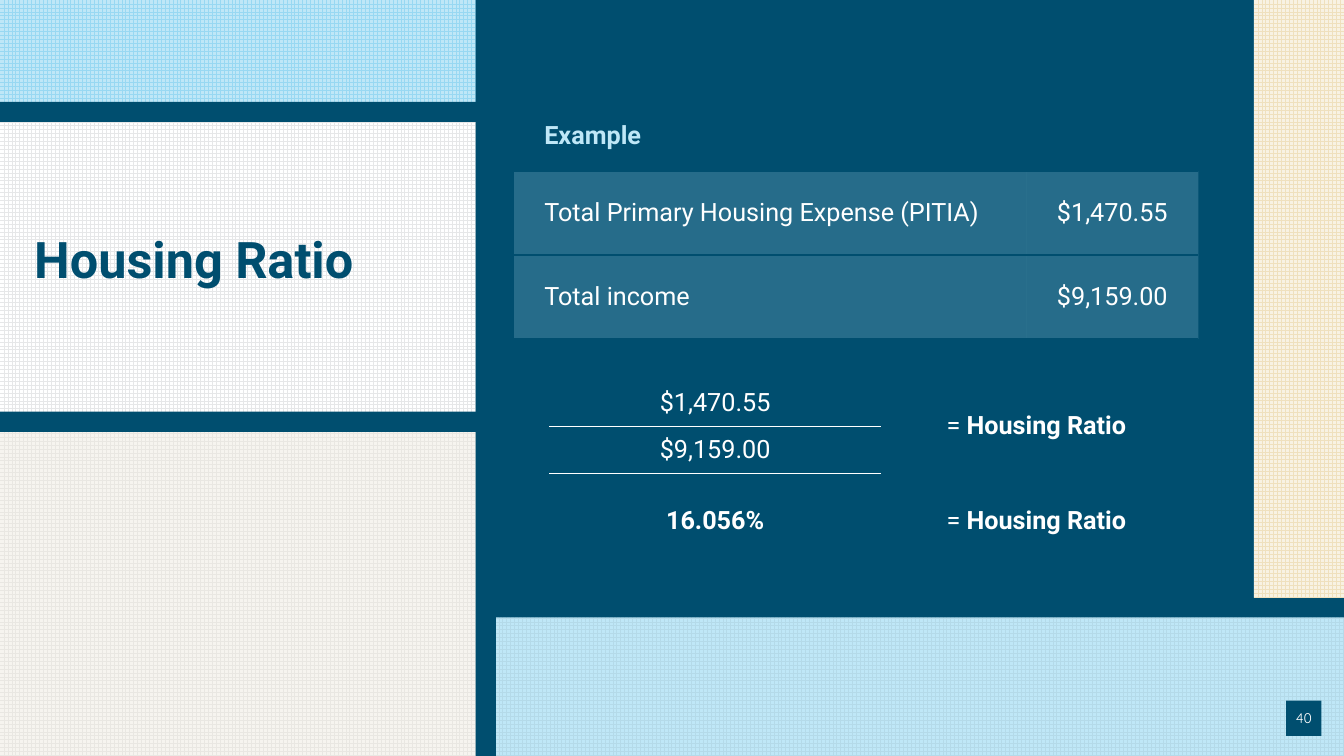
from lxml.etree import SubElement
from pptx import Presentation
from pptx.dml.color import RGBColor
from pptx.enum.dml import MSO_PATTERN as PATTERN
from pptx.enum.shapes import MSO_SHAPE as SHAPE
from pptx.enum.text import MSO_ANCHOR as ANCHOR, PP_ALIGN as ALIGN
from pptx.oxml.ns import qn
from pptx.util import Pt

NAVY, SKY, WHITE = "004E6F", "BFE7F7", "FFFFFF"


def paint(fill, color, grid=None):
    """Solid fill, or a large grid drawn over the colour."""
    if grid:
        fill.patterned()
        fill.pattern = PATTERN.LARGE_GRID
        fill.fore_color.rgb = RGBColor.from_string(grid)
        fill.back_color.rgb = RGBColor.from_string(color)
    else:
        fill.solid()
        fill.fore_color.rgb = RGBColor.from_string(color)


def write(tf, text, size=18, color=WHITE, bold=False, font="Roboto", align=ALIGN.LEFT):
    """Add a run to the first paragraph of a text frame."""
    p = tf.paragraphs[0]
    p.alignment = align
    r = p.add_run()
    r.text = text
    r.font.size, r.font.bold, r.font.name = Pt(size), bold, font
    r.font.color.rgb = RGBColor.from_string(color)
    return p


prs = Presentation()
prs.slide_width, prs.slide_height = Pt(960), Pt(540)
s = prs.slides.add_slide(prs.slide_layouts[6])
paint(s.background.fill, WHITE, "E6E7E8")

# Panels, dividing bars and the page number square, back to front
for x, y, w, h, color, grid in [
    (0, 303.8, 346.3, 236.2, "F6F4EF", "E9E7E2"),
    (341.3, 0, 555.1, 441.4, NAVY, None),
    (0, 0, 354.2, 72.7, SKY, "98D8F2"),
    (353.5, 438.5, 606.5, 101.5, SKY, "B4DAE9"),
    (339.8, 0, 14.4, 540, NAVY, None),
    (0, 72.7, 354.2, 14.4, NAVY, None),
    (0, 294.1, 346.3, 14.4, NAVY, None),
    (347.4, 426.6, 612.6, 14.4, NAVY, None),
    (895.7, 0, 64.3, 427, "F8F2E3", "EFE0BD"),
    (918.7, 500.4, 25.2, 25.2, NAVY, None),
]:
    sp = s.shapes.add_shape(SHAPE.RECTANGLE, Pt(x), Pt(y), Pt(w), Pt(h))
    sp.shadow.inherit = False
    sp.line.fill.background()
    paint(sp.fill, color, grid)

# Page number, in the last square
tf = sp.text_frame
tf.margin_left = tf.margin_right = tf.margin_top = tf.margin_bottom = 0
tf.vertical_anchor = ANCHOR.MIDDLE
write(tf, "40", size=10, font="Quicksand", align=ALIGN.CENTER)

# Title
tf = s.shapes.add_textbox(Pt(24.5), Pt(95), Pt(300.2), Pt(185)).text_frame
tf.word_wrap = True
tf.margin_left = 0
tf.vertical_anchor = ANCHOR.MIDDLE
write(tf, "Housing Ratio", size=36, color=NAVY, bold=True).line_spacing = 0.9

# Table grid, with the "No Style, No Grid" style
widths = [25.2, 236.9, 39.6, 64.1, 123.1]
heights = [50.4, 59.8, 59.8, 28.8, 33.8, 33.8, 67.7]
table = s.shapes.add_table(len(heights), len(widths), Pt(367.2), Pt(72),
                           Pt(sum(widths)), Pt(sum(heights))).table
table.first_row = table.horz_banding = False
table._tbl.tblPr[0].text = "{2D5ABB26-0587-4C30-8999-92F81FD0307C}"
for column, w in zip(table.columns, widths):
    column.width = Pt(w)
for row, h in zip(table.rows, heights):
    row.height = Pt(h)

# Cell borders: (rows, columns, side, colour)
for rows, cols, side, color in [
    ((1, 2), range(5), "lnT", NAVY),
    ((0, 1), range(5), "lnB", NAVY),
    ((5,), (1,), "lnT", WHITE),
    ((4,), (1,), "lnB", WHITE),
]:
    for i in rows:
        for j in cols:
            tcPr = table.cell(i, j)._tc.get_or_add_tcPr()
            ln = SubElement(tcPr, qn("a:" + side), w=str(Pt(1)))
            SubElement(SubElement(ln, qn("a:solidFill")), qn("a:srgbClr"), val=color)

# Cell fills: the two amounts stand on a translucent band
for i in range(len(heights)):
    for j in range(len(widths)):
        cell = table.cell(i, j)
        cell.vertical_anchor = ANCHOR.MIDDLE
        if i in (1, 2):
            paint(cell.fill, SKY)
            clr = cell._tc.tcPr.find(qn("a:solidFill"))[0]
            SubElement(clr, qn("a:alpha"), val="20000")
        else:
            cell.fill.background()

# Merged cells: (top row, left column, bottom row, right column)
for top, left, bottom, right in [(0, 0, 0, 3), (1, 0, 1, 3), (2, 0, 2, 3),
                                 (3, 0, 3, 4), (4, 3, 5, 4), (6, 3, 6, 4)]:
    table.cell(top, left).merge(table.cell(bottom, right))

# Row labels
for i, text in enumerate(["Example", "Total Primary Housing Expense (PITIA)", "Total income"]):
    cell = table.cell(i, 0)
    cell.margin_left = Pt(21.6)
    write(cell.text_frame, text, color=WHITE if i else SKY, bold=i == 0)

# Amounts, the fraction and its result
for i, j, text in [(1, 4, "$1,470.55"), (2, 4, "$9,159.00"),
                   (4, 1, "$1,470.55"), (5, 1, "$9,159.00"), (6, 1, "16.056%")]:
    write(table.cell(i, j).text_frame, text, bold=i == 6, align=ALIGN.CENTER)
for i in (4, 6):
    tf = table.cell(i, 3).text_frame
    write(tf, "= ")
    write(tf, "Housing Ratio", bold=True)

prs.save("out.pptx")
